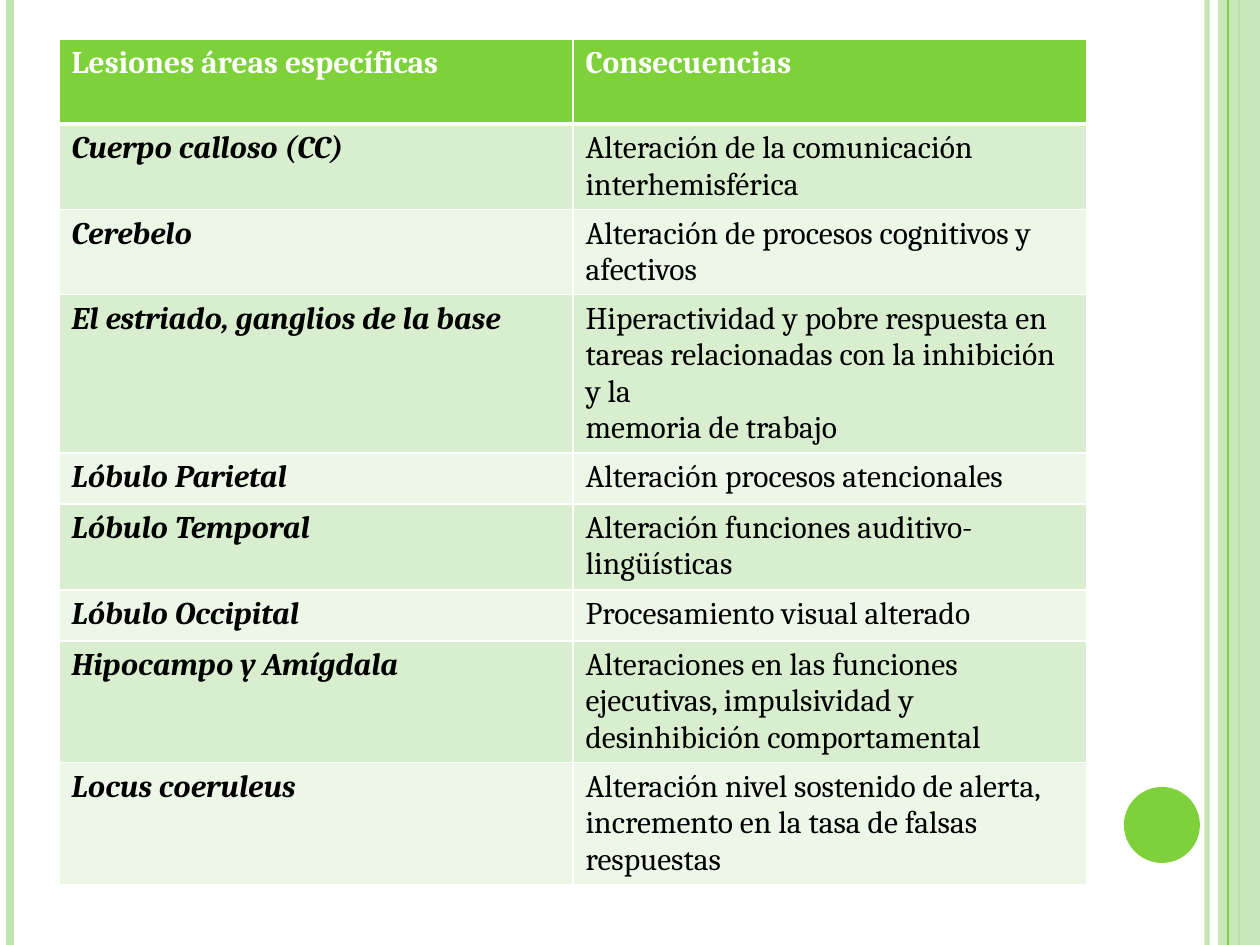
from lxml import etree
from pptx import Presentation
from pptx.dml.color import RGBColor
from pptx.enum.shapes import MSO_CONNECTOR, MSO_SHAPE
from pptx.oxml.ns import qn
from pptx.util import Emu, Pt

STRAIGHT = MSO_CONNECTOR.STRAIGHT
RECTANGLE, OVAL = MSO_SHAPE.RECTANGLE, MSO_SHAPE.OVAL

COLORS = {"green": "7FD13B", "pale": "C0E5AF", "odd": "D8EECE", "even": "ECF7E8",
          "white": "FFFFFF", "black": "000000"}
FONT, SIZE = "Cambria", 18

# Content: lesion, consequence paragraphs, row height in px
HEADER = ("Lesiones áreas específicas", ["Consecuencias"], 85)
LESIONS = [
    ("Cuerpo calloso (CC)", ["Alteración de la comunicación interhemisférica"], 85),
    ("Cerebelo", ["Alteración de procesos cognitivos y afectivos"], 85),
    ("El estriado, ganglios de la base",
     ["Hiperactividad y pobre respuesta en tareas relacionadas con la inhibición y la",
      "memoria de trabajo"], 158),
    ("Lóbulo Parietal", ["Alteración procesos atencionales"], 51),
    ("Lóbulo Temporal", ["Alteración funciones auditivo-lingüísticas"], 86),
    ("Lóbulo Occipital", ["Procesamiento visual alterado"], 51),
    ("Hipocampo y Amígdala",
     ["Alteraciones en las funciones ejecutivas, impulsividad y "
      "desinhibición comportamental"], 122),
    ("Locus coeruleus",
     ["Alteración nivel sostenido de alerta, incremento en la tasa de falsas respuestas"], 121),
]
ROWS = [HEADER] + LESIONS

# Layout in px
SLIDE_W, SLIDE_H = 1260, 945
TABLE_LEFT, TABLE_TOP, COLUMN_W = 59, 39, 514
# Stripes: x, colour, width in points, opacity in percent
STRIPES_BEHIND = [(1207, "pale", 3, 93), (10, "pale", 4.5, 100), (1239, "green", 1.5, 100)]
STRIPES_FRONT = [(1228, "green", 0.75, 100)]
BAND = (1218, 0, 42, SLIDE_H)
DOT = (1124, 787, 76, 76)


def px(value):
    return Emu(round(value * 914400 / 126))


def rgb(name):
    return RGBColor.from_string(COLORS[name])


def set_opacity(properties, percent):
    color = next(properties.iter(qn("a:srgbClr")))
    etree.SubElement(color, qn("a:alpha"), val=str(percent * 1000))


def add_stripe(shapes, x, color, width, opacity):
    stripe = shapes.add_connector(STRAIGHT, px(x), 0, px(x), px(SLIDE_H))
    stripe.line.color.rgb = rgb(color)
    stripe.line.width = Pt(width)
    properties = stripe._element.spPr
    if opacity < 100:
        set_opacity(properties, opacity)
    etree.SubElement(properties, qn("a:effectLst"))


def add_solid(shapes, kind, box, color):
    solid = shapes.add_shape(kind, *map(px, box))
    solid.shadow.inherit = False
    solid.fill.solid()
    solid.fill.fore_color.rgb = rgb(color)
    solid.line.fill.background()
    return solid


def set_borders(cell, widths):
    properties = cell._tc.get_or_add_tcPr()
    for side in "LRTB":
        border = etree.SubElement(properties, qn(f"a:ln{side}"), w=str(Pt(widths.get(side, 1))))
        fill = etree.SubElement(border, qn("a:solidFill"))
        etree.SubElement(fill, qn("a:srgbClr"), val=COLORS["white"])


def write_cell(cell, paragraphs, color, bold, italic):
    frame = cell.text_frame
    for i, text in enumerate(paragraphs):
        paragraph = frame.paragraphs[0] if i == 0 else frame.add_paragraph()
        run = paragraph.add_run()
        run.text = text
        run.font.name, run.font.size = FONT, Pt(SIZE)
        run.font.bold, run.font.italic = bold, italic
        run.font.color.rgb = rgb(color)


def add_lesion_table(shapes):
    height = sum(row[2] for row in ROWS)
    table = shapes.add_table(len(ROWS), 2, px(TABLE_LEFT), px(TABLE_TOP),
                             px(2 * COLUMN_W), px(height)).table
    for column in table.columns:
        column.width = px(COLUMN_W)
    for r, (lesion, consequence, row_height) in enumerate(ROWS):
        table.rows[r].height = px(row_height)
        is_header = r == 0
        row_fill = "green" if is_header else ("odd" if r % 2 else "even")
        # The header is set off by a thicker rule
        widths = {0: {"B": 3}, 1: {"T": 3}}.get(r, {})
        for c, paragraphs in enumerate(([lesion], consequence)):
            cell = table.cell(r, c)
            set_borders(cell, widths)
            cell.fill.solid()
            cell.fill.fore_color.rgb = rgb(row_fill)
            write_cell(cell, paragraphs, "white" if is_header else "black",
                       bold=is_header or c == 0, italic=not is_header and c == 0)


def main():
    deck = Presentation()
    deck.slide_width, deck.slide_height = px(SLIDE_W), px(SLIDE_H)
    shapes = deck.slides.add_slide(deck.slide_layouts[6]).shapes

    # Side decoration
    for stripe in STRIPES_BEHIND:
        add_stripe(shapes, *stripe)
    band = add_solid(shapes, RECTANGLE, BAND, "pale")
    set_opacity(band._element.spPr, 87)
    for stripe in STRIPES_FRONT:
        add_stripe(shapes, *stripe)
    add_solid(shapes, OVAL, DOT, "green")

    # Lesions and their consequences
    add_lesion_table(shapes)
    deck.save("out.pptx")


if __name__ == "__main__":
    main()
